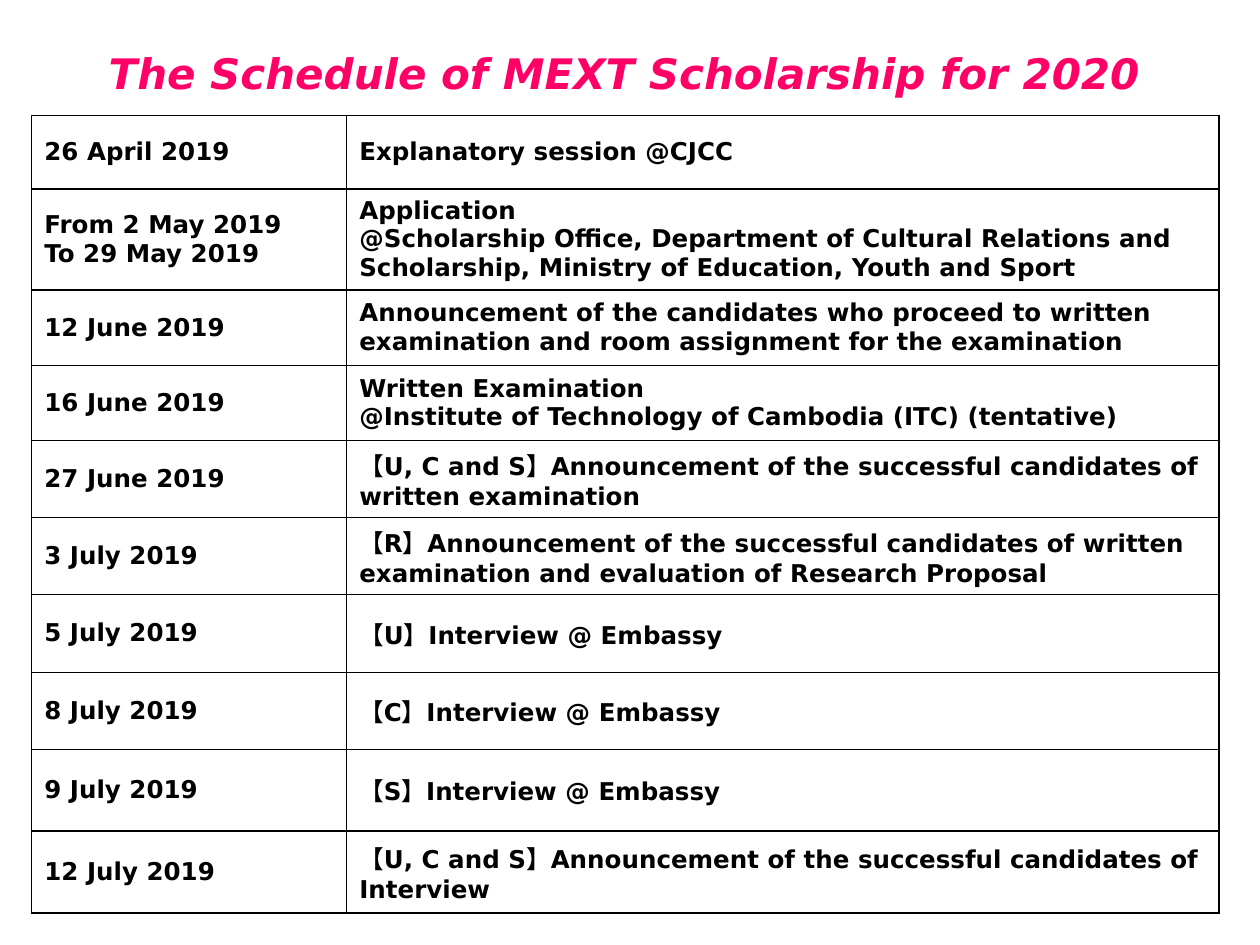
from dataclasses import dataclass

from lxml.etree import SubElement
from pptx import Presentation
from pptx.dml.color import RGBColor
from pptx.enum.text import MSO_ANCHOR, MSO_AUTO_SIZE, PP_ALIGN
from pptx.oxml.ns import qn
from pptx.util import Cm, Pt


@dataclass(frozen=True)
class Theme:
    font: str = "DejaVu Sans"
    title_color: str = "FF0066"
    text_color: str = "000000"
    cell_color: str = "FFFFFF"
    border_color: str = "000000"
    title_size: int = 24
    cell_size: int = 14
    border_width: int = 1


THEME = Theme()
COLUMN_WIDTHS = (6.35, 17.58)

# Row height in cm, date, event
SCHEDULE = [
    (1.48, "26 April 2019", "Explanatory session @CJCC"),
    (1.98, "From 2 May 2019\nTo 29 May 2019",
     "Application\n@Scholarship Office, Department of Cultural Relations and "
     "Scholarship, Ministry of Education, Youth and Sport"),
    (1.52, "12 June 2019",
     "Announcement of the candidates who proceed to written examination "
     "and room assignment for the examination"),
    (1.52, "16 June 2019",
     "Written Examination\n"
     "@Institute of Technology of Cambodia (ITC) (tentative)"),
    (1.55, "27 June 2019",
     "【U, C and S】Announcement of the successful candidates "
     "of written examination"),
    (1.55, "3 July 2019",
     "【R】Announcement of the successful candidates of written "
     "examination and evaluation of Research Proposal"),
    (1.57, "5 July 2019", "【U】Interview @ Embassy"),
    (1.55, "8 July 2019", "【C】Interview @ Embassy"),
    (1.65, "9 July 2019", "【S】Interview @ Embassy"),
    (1.65, "12 July 2019",
     "【U, C and S】Announcement of the successful candidates of Interview"),
]


def style_text(frame, size, color, italic=False):
    for para in frame.paragraphs:
        font = para.font
        font.name = THEME.font
        font.size = Pt(size)
        font.bold = True
        font.italic = italic
        font.color.rgb = RGBColor.from_string(color)


def add_title(page, text):
    box = page.shapes.add_textbox(Cm(1.47), Cm(0.84), Cm(22.23), Cm(1.27))
    frame = box.text_frame
    frame.word_wrap = True
    frame.auto_size = MSO_AUTO_SIZE.SHAPE_TO_FIT_TEXT
    frame.text = text
    frame.paragraphs[0].alignment = PP_ALIGN.CENTER
    style_text(frame, THEME.title_size, THEME.title_color, italic=True)


def add_borders(cell):
    """Draw all four sides; the schema wants the lines ahead of the fill."""
    properties = cell._tc.get_or_add_tcPr()
    for position, side in enumerate(("lnL", "lnR", "lnT", "lnB")):
        line = SubElement(properties, qn(f"a:{side}"), w=str(Pt(THEME.border_width)))
        fill = SubElement(line, qn("a:solidFill"))
        SubElement(fill, qn("a:srgbClr"), val=THEME.border_color)
        properties.insert(position, line)


def fill_cell(cell, text):
    cell.text = text
    cell.vertical_anchor = MSO_ANCHOR.MIDDLE
    cell.fill.solid()
    cell.fill.fore_color.rgb = RGBColor.from_string(THEME.cell_color)
    style_text(cell.text_frame, THEME.cell_size, THEME.text_color)
    add_borders(cell)


def add_schedule(page):
    height = sum(row[0] for row in SCHEDULE)
    table = page.shapes.add_table(
        len(SCHEDULE), len(COLUMN_WIDTHS),
        Cm(0.64), Cm(2.33), Cm(sum(COLUMN_WIDTHS)), Cm(height)).table
    table.first_row = False
    table.horz_banding = False
    for column, width in zip(table.columns, COLUMN_WIDTHS):
        column.width = Cm(width)
    for row, (row_height, *texts) in zip(table.rows, SCHEDULE):
        row.height = Cm(row_height)
        for cell, text in zip(row.cells, texts):
            fill_cell(cell, text)


def main():
    deck = Presentation()
    deck.slide_width, deck.slide_height = Cm(25.4), Cm(19.05)
    page = deck.slides.add_slide(deck.slide_layouts[6])
    add_title(page, "The Schedule of MEXT Scholarship for 2020")
    add_schedule(page)
    deck.save("out.pptx")


if __name__ == "__main__":
    main()
